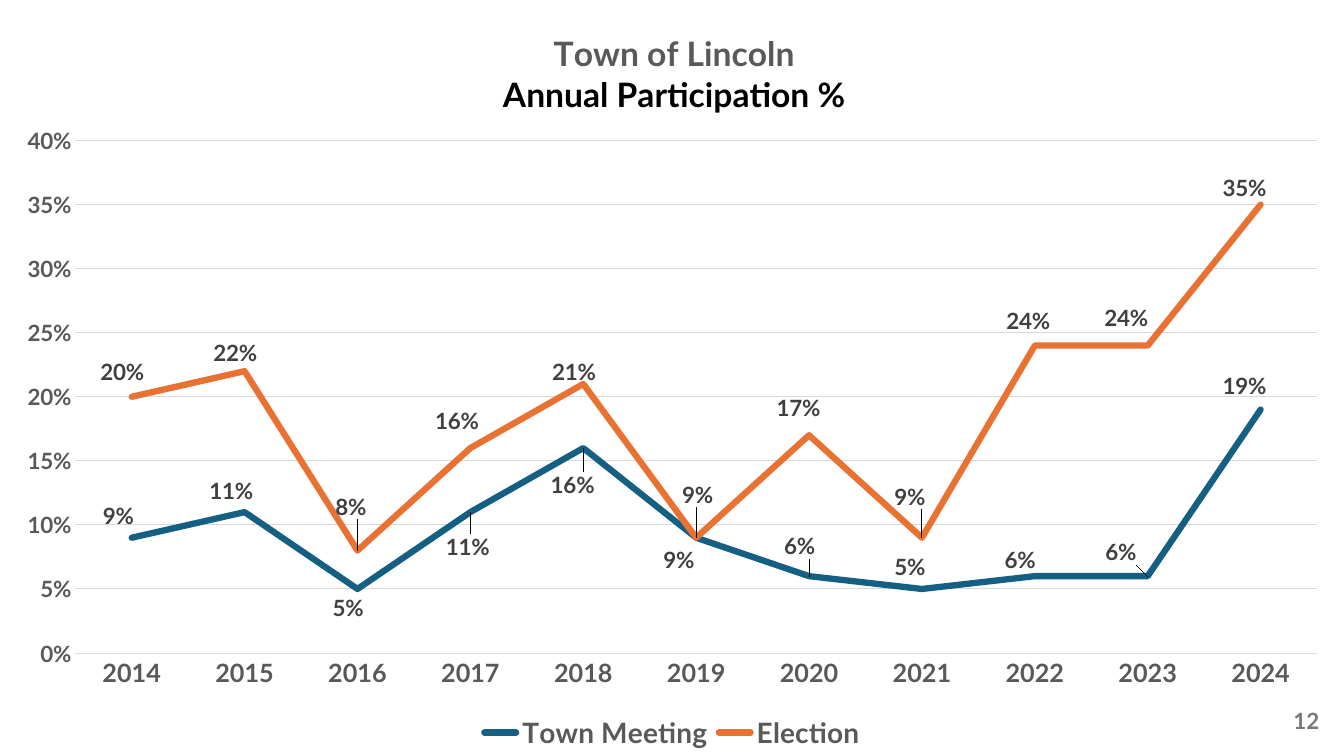
from dataclasses import dataclass
from itertools import chain
from lxml.etree import SubElement as Sub
from pptx import Presentation
from pptx.chart.data import CategoryChartData as Data
from pptx.dml.color import RGBColor as Rgb
from pptx.enum.chart import XL_CHART_TYPE as Kind, XL_LABEL_POSITION as Spot
from pptx.enum.chart import XL_LEGEND_POSITION as Side, XL_TICK_MARK as Tick
from pptx.enum.text import MSO_ANCHOR as Anchor, PP_ALIGN as Align
from pptx.oxml import parse_xml
from pptx.oxml.ns import nsdecls, qn
from pptx.util import Inches, Pt


@dataclass(frozen=True)
class Theme:
    face: str = "Lato"
    head: int = 24
    key: int = 20
    year: int = 18
    small: int = 16
    ink: str = "000000"
    gray: str = "595959"
    dark: str = "404040"
    pale: str = "797979"
    rule: str = "D9D9D9"
    thin: float = 0.75
    thick: float = 4.5


T = Theme()
YEARS = [str(year) for year in range(2014, 2025)]
LINES = [
    ("Town Meeting", "156082",
     [9, 11, 5, 11, 16, 9, 6, 5, 6, 6, 19],
     [(-1, -3), (-1, -2.8), (-0.7, 2.5), (-0.2, 4.6), (-0.8, 4.8), (-1.3, 2.9),
      (-0.7, -4), (-0.9, -3), (-1.1, -2.2), (-2, -3.2), (-1.2, -3.2)]),
    ("Election", "E97132",
     [20, 22, 8, 16, 21, 9, 17, 9, 24, 24, 35],
     [(-0.7, -3.4), (-0.7, -2.4), (-0.5, -5.8), (-1, -3.6), (-0.7, -1.7), (0.1, -5.7),
      (-0.8, -3.7), (-0.9, -5.5), (-0.5, -3.3), (-1.6, -3.7), (-1.2, -2.2)]),
]


def apply(item, form):
    for name, value in form.items():
        setattr(item, name, value)


def style(font, size, color):
    apply(font, {"name": T.face, "size": Pt(size), "bold": True})
    font.color.rgb = Rgb.from_string(color)


def stroke(line, color, width):
    line.color.rgb = Rgb.from_string(color)
    line.width = Pt(width)


def place(node, slot, form):
    for old in node.findall(qn("c:layout")):
        node.remove(old)
    marks = "".join(f'<c:{name} val="{value}"/>' for name, value in form.items())
    node.insert(slot, parse_xml(
        f'<c:layout {nsdecls("c")}><c:manualLayout>{marks}</c:manualLayout></c:layout>'))


def share(x, y, **size):
    return {"xMode": "edge", "yMode": "edge", "x": x / 100, "y": y / 100,
            **{name: value / 100 for name, value in size.items()}}


def title(chart):
    frame = chart.chart_title.text_frame
    rows = [("Town of Lincoln", T.gray), ("Annual Participation %", T.ink)]
    for at, (text, color) in enumerate(rows):
        para = frame.add_paragraph() if at else frame.paragraphs[0]
        para.alignment = Align.CENTER
        run = para.add_run()
        run.text = text
        style(run.font, T.head, color)
    place(chart.element.xpath("c:chart/c:title")[0], 1, share(37.2, 3.7))


def axes(chart):
    years, rates = chart.category_axis, chart.value_axis
    for axis, size in ((years, T.year), (rates, T.small)):
        apply(axis, {"major_tick_mark": Tick.NONE, "minor_tick_mark": Tick.NONE})
        style(axis.tick_labels.font, size, T.gray)
    apply(rates, {"minimum_scale": 0, "maximum_scale": 0.4, "major_unit": 0.05,
                  "has_major_gridlines": True})
    apply(rates.tick_labels, {"number_format": "0%", "number_format_is_linked": False})
    rates.format.line.fill.background()
    for line in (years.format.line, rates.major_gridlines.format.line):
        stroke(line, T.rule, T.thin)


def curves(chart):
    for curve, (_, color, _, shifts) in zip(chart.plots[0].series, LINES):
        curve.smooth = False
        stroke(curve.format.line, color, T.thick)
        tags = curve.data_labels
        apply(tags, {"show_value": True, "number_format": "0%",
                     "number_format_is_linked": False, "position": Spot.CENTER})
        style(tags.font, T.small, T.dark)
        for at in range(len(shifts)):
            tag = curve.points[at].data_label
            style(tag.font, T.small, T.dark)
            tag.position = Spot.CENTER
    for line in chart.element.xpath(".//c:ser/c:spPr/a:ln"):
        line.set("cap", "rnd")
        Sub(line, qn("a:round"))
    moves = chain.from_iterable(row[3] for row in LINES)
    for node, (x, y) in zip(chart.element.xpath(".//c:dLbl"), moves):
        place(node, 1, {"x": x / 100, "y": y / 100})


def legend(chart):
    chart.has_legend = True
    apply(chart.legend, {"position": Side.BOTTOM, "include_in_layout": False})
    style(chart.legend.font, T.key, T.gray)
    place(chart.element.xpath(".//c:legend")[0], 1, share(35.2, 93.9, w=29.6, h=6))


def graph(slide, box):
    data = Data(number_format="0%")
    data.categories = YEARS
    for name, _, rates, _ in LINES:
        data.add_series(name, [rate / 100 for rate in rates])
    chart = slide.shapes.add_chart(Kind.LINE, *box, data).chart
    apply(chart.font, {"name": T.face, "size": Pt(10)})
    chart.plots[0].vary_by_categories = False
    title(chart)
    axes(chart)
    curves(chart)
    legend(chart)
    plot = chart.element.xpath(".//c:plotArea")[0]
    place(plot, 0, {"layoutTarget": "inner", **share(5.6, 18.6, w=92.4, h=67.8)})


def folio(slide, box):
    frame = slide.shapes.add_textbox(*box).text_frame
    apply(frame, {"word_wrap": True, "vertical_anchor": Anchor.MIDDLE})
    para = frame.paragraphs[0]
    para.alignment = Align.RIGHT
    run = para.add_run()
    run.text = "12"
    style(run.font, T.small, T.pale)


def main():
    deck = Presentation()
    wide, high = Inches(13.33), Inches(7.5)
    apply(deck, {"slide_width": wide, "slide_height": high})
    slide = deck.slides.add_slide(deck.slide_layouts[6])
    graph(slide, (0, 0, wide, high))
    folio(slide, (int(wide * 0.764), int(high * 0.927), int(wide * 0.225), int(high * 0.053)))
    deck.save("out.pptx")


if __name__ == "__main__":
    main()
